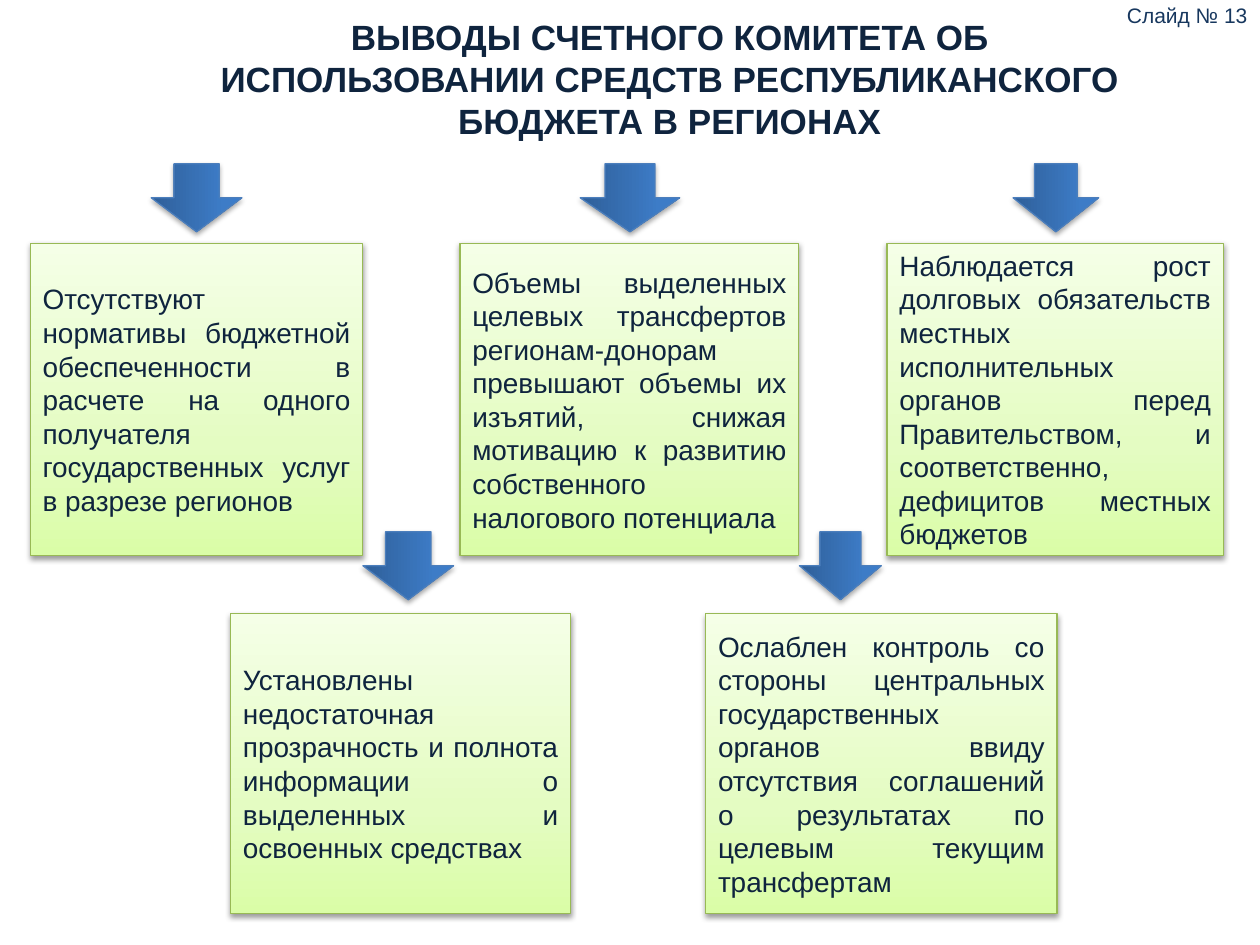
"""Build the slide of audit conclusions on regional use of the national budget."""
from dataclasses import dataclass
from typing import NamedTuple

from lxml.etree import SubElement
from pptx import Presentation
from pptx.dml.color import RGBColor
from pptx.enum.shapes import MSO_SHAPE as Preset
from pptx.enum.text import MSO_ANCHOR as Anchor, PP_ALIGN as Align
from pptx.oxml.ns import qn
from pptx.util import Emu, Inches, Pt

COLUMNS, ROWS = 100, 75


class Style(NamedTuple):
    stops: tuple[tuple[int, str], ...]
    line: str
    shadow_alpha: int
    shadow_distance: float


@dataclass(frozen=True)
class Theme:
    font: str = "Arial"
    ink: str = "0F243E"
    label_ink: str = "17375E"
    title_size: int = 20
    body_size: int = 16
    label_size: int = 12
    line_width: float = 0.75
    shadow_blur: float = 3.1
    card: Style = Style(((0, "DAFDA7"), (35, "E4FCC2"), (100, "F5FFE7")), "98B955", 38, 1.6)
    arrow: Style = Style(((0, "2F5F99"), (80, "3D7CC7"), (100, "3A7CCB")), "4B7EBC", 35, 1.8)


class Area(NamedTuple):
    column: float
    row: float
    columns: float
    rows: float


class Card(NamedTuple):
    column: float
    columns: float
    text: str


class Arrow(NamedTuple):
    center: float
    breadth: float


class Band(NamedTuple):
    row: float
    rows: float
    arrow_row: float
    cards: tuple[Card, ...]
    arrows: tuple[Arrow, ...]


THEME = Theme()
ARROW_LENGTH = 5.4
BANDS = (
    Band(19.3, 24.8, 15.7, (
        Card(2.4, 26.4, "Отсутствуют нормативы бюджетной обеспеченности в расчете на одного "
                        "получателя государственных услуг в разрезе регионов"),
        Card(36.5, 26.9, "Объемы выделенных целевых трансфертов регионам-донорам превышают объемы "
                         "их изъятий, снижая мотивацию к развитию собственного налогового потенциала"),
        Card(70.4, 26.7, "Наблюдается рост долговых обязательств местных исполнительных органов перед "
                         "Правительством, и соответственно, дефицитов местных бюджетов"),
    ), (Arrow(15.6, 7.2), Arrow(50, 7.9), Arrow(83.8, 6.8))),
    Band(48.7, 23.8, 44.9, (
        Card(18.3, 27, "Установлены недостаточная прозрачность и полнота информации о выделенных "
                       "и освоенных средствах"),
        Card(56, 27.9, "Ослаблен контроль со стороны центральных государственных органов ввиду "
                       "отсутствия соглашений о результатах по целевым текущим трансфертам"),
    ), (Arrow(32.4, 7.2), Arrow(66.7, 6.5))),
)


def place(deck, area: Area) -> tuple[Emu, Emu, Emu, Emu]:
    """Turn a grid area into slide lengths."""
    cell_width, cell_height = deck.slide_width / COLUMNS, deck.slide_height / ROWS
    return (Emu(round(area.column * cell_width)), Emu(round(area.row * cell_height)),
            Emu(round(area.columns * cell_width)), Emu(round(area.rows * cell_height)))


def write(box, text: str, size: int, ink: str, align: Align, bold: bool = False, **frame) -> None:
    """Fill a box with one paragraph of formatted text."""
    text_frame = box.text_frame
    for name, value in {"word_wrap": True, "vertical_anchor": Anchor.MIDDLE, **frame}.items():
        setattr(text_frame, name, value)
    para = text_frame.paragraphs[0]
    para.alignment = align
    span = para.add_run()
    span.text = text
    for name, value in {"name": THEME.font, "size": Pt(size), "bold": bold}.items():
        setattr(span.font, name, value)
    span.font.color.rgb = RGBColor.from_string(ink)


def add_color(parent, color: str):
    """Append a colour element and return it."""
    return SubElement(parent, qn("a:srgbClr"), val=color)


def decorate(shape, style: Style) -> None:
    """Give a shape its upward gradient, outline and soft shadow."""
    shape.fill.gradient()
    shape.fill.gradient_angle = 90
    properties = shape._element.spPr
    stop_list = properties.find(f".//{qn('a:gsLst')}")
    stop_list[:] = []
    for position, color in style.stops:
        add_color(SubElement(stop_list, qn("a:gs"), pos=str(position * 1000)), color)
    shape.line.color.rgb = RGBColor.from_string(style.line)
    shape.line.width = Pt(THEME.line_width)
    shape.shadow.inherit = False
    shadow = SubElement(properties.find(qn("a:effectLst")), qn("a:outerShdw"),
                        blurRad=str(Pt(THEME.shadow_blur)), dist=str(Pt(style.shadow_distance)),
                        dir="5400000", rotWithShape="0")
    SubElement(add_color(shadow, "000000"), qn("a:alpha"), val=str(style.shadow_alpha * 1000))


def draw_card(deck, page, band: Band, card: Card) -> None:
    """Draw one conclusion card."""
    area = Area(card.column, band.row, card.columns, band.rows)
    box = page.shapes.add_shape(Preset.RECTANGLE, *place(deck, area))
    decorate(box, THEME.card)
    write(box, card.text, THEME.body_size, THEME.ink, Align.JUSTIFY)


def draw_arrow(deck, page, band: Band, arrow: Arrow) -> None:
    """Draw one arrow pointing down, centred on its place."""
    area = Area(arrow.center - ARROW_LENGTH / 2, band.arrow_row - arrow.breadth / 2,
                ARROW_LENGTH, arrow.breadth)
    shape = page.shapes.add_shape(Preset.RIGHT_ARROW, *place(deck, area))
    shape.rotation = 90
    decorate(shape, THEME.arrow)


def main() -> None:
    """Build and save the deck."""
    deck = Presentation()
    deck.slide_width, deck.slide_height = Inches(10), Inches(7.5)
    page = deck.slides.add_slide(deck.slide_layouts[6])
    label = page.shapes.add_textbox(*place(deck, Area(76.7, -0.8, 23.3, 4)))
    write(label, "Слайд № 13", THEME.label_size, THEME.label_ink, Align.RIGHT,
          margin_right=Inches(0.1))
    title = page.shapes.add_textbox(*place(deck, Area(13.7, 1.2, 78.9, 12.6)))
    write(title, "ВЫВОДЫ СЧЕТНОГО КОМИТЕТА ОБ ИСПОЛЬЗОВАНИИ СРЕДСТВ РЕСПУБЛИКАНСКОГО "
                 "БЮДЖЕТА В РЕГИОНАХ", THEME.title_size, THEME.ink, Align.CENTER, bold=True,
          vertical_anchor=Anchor.TOP, margin_left=Inches(0.14), margin_right=Inches(0.14),
          margin_top=0, margin_bottom=0)
    for band in BANDS:
        for card in band.cards:
            draw_card(deck, page, band, card)
        for arrow in band.arrows:
            draw_arrow(deck, page, band, arrow)
    deck.save("out.pptx")


if __name__ == "__main__":
    main()
